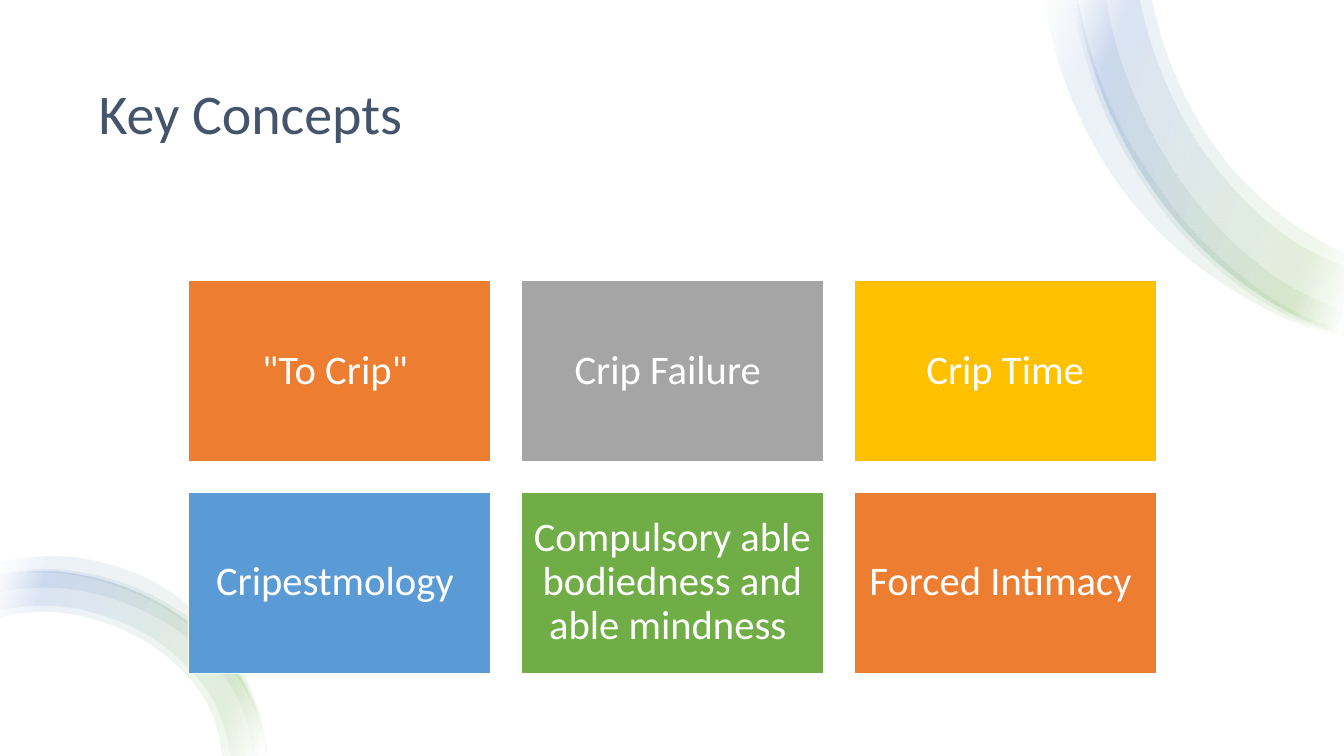
"""Build the Key Concepts slide: two curved ribbons, a title and a grid of tiles."""
from dataclasses import dataclass

from lxml import etree
from pptx import Presentation
from pptx import util as u
from pptx.dml.color import RGBColor
from pptx.enum import shapes, text
from pptx.oxml.ns import qn

Points = list[tuple[float, float]]

COLUMNS, ROWS = 13.33, 7.5
CELL = u.Inches(1)
TILE_COLUMNS, TILE_ROWS, GAP = 3, 1.8, 0.3
TILES_ACROSS = 3
BOARD_LEFT, BOARD_TOP = 1.87, 2.78
RIBBON_STOPS = [(2, "FFFFFF"), (16, "70AD47"), (85, "4472C4"), (100, "FFFFFF")]
RIBBON_OPACITY = 10


@dataclass
class Tile:
    label: str
    colour: str


@dataclass
class Ribbon:
    outer: Points
    inner: Points


TILES = [
    Tile('"To Crip" ', "ED7D31"),
    Tile("Crip Failure ", "A5A5A5"),
    Tile("Crip Time", "FFC000"),
    Tile("Cripestmology ", "5B9BD5"),
    Tile("Compulsory able bodiedness and able mindness ", "70AD47"),
    Tile("Forced Intimacy ", "ED7D31"),
]

TOP_EDGE = [(13.33, 3.32), (13.09, 3.24), (12.23, 2.74), (11.52, 2), (10.99, 1.07),
            (10.69, 0.04), (10.67, -0.09)]
LOW_EDGE = [(2.63, 7.5), (2.62, 7.35), (2.36, 6.69), (1.85, 6.16), (1.17, 5.8),
            (0.4, 5.67), (0, 5.72)]

RIBBONS = [
    Ribbon([(13.33, 3.35), (12.82, 3.19), (12.21, 2.87), (11.65, 2.45), (11.16, 1.92),
            (10.78, 1.31), (10.41, 0.26), (10.36, -0.09)],
           [(10.68, -0.09), (10.82, 0.52), (11.06, 1.15), (11.4, 1.73), (11.81, 2.27),
            (12.3, 2.73), (12.86, 3.1), (13.33, 3.28)]),
    Ribbon(TOP_EDGE,
           [(11.41, -0.09), (11.58, 0.55), (12.19, 1.64), (13.07, 2.38), (13.33, 2.51)]),
    Ribbon([(13.33, 3.33), (12.79, 3.14), (11.73, 2.33), (11.32, 1.79), (10.99, 1.19),
            (10.68, 0.2), (10.63, -0.09)],
           [(10.96, -0.09), (11.07, 0.44), (11.29, 1.04), (11.95, 2.11), (12.39, 2.55),
            (12.9, 2.9), (13.33, 3.08)]),
    Ribbon(TOP_EDGE,
           [(11.29, -0.09), (11.47, 0.59), (12.1, 1.72), (13.01, 2.5), (13.33, 2.64)]),
    Ribbon(LOW_EDGE,
           [(0, 6.13), (0.4, 6.07), (1.07, 6.19), (1.66, 6.52), (2.06, 7), (2.2, 7.5)]),
    Ribbon(LOW_EDGE,
           [(0, 6.06), (0.4, 6.01), (1.09, 6.13), (1.7, 6.47), (2.12, 6.97), (2.28, 7.5)]),
    Ribbon([(2.63, 7.5), (2.59, 7.19), (2.47, 6.85), (2.03, 6.27), (1.42, 5.87),
            (0.69, 5.67), (0.31, 5.66), (0, 5.71)],
           [(0, 5.88), (0.33, 5.84), (0.67, 5.85), (1.34, 6.03), (1.92, 6.39),
            (2.34, 6.91), (2.51, 7.5)]),
    Ribbon([(2.64, 7.5), (2.5, 6.87), (2.1, 6.23), (1.48, 5.75), (0.71, 5.53),
            (0.31, 5.53), (0, 5.59)],
           [(0, 5.72), (0.32, 5.68), (0.69, 5.7), (1.22, 5.84), (1.71, 6.09),
            (2.25, 6.58), (2.52, 7.05), (2.62, 7.5)]),
]


def colour(value: str) -> RGBColor:
    """Turn a hex string into a colour."""
    return RGBColor.from_string(value)


def area(left: float, top: float, width: float, height: float) -> list[int]:
    """Turn columns and rows into slide lengths."""
    return [round(length * CELL) for length in (left, top, width, height)]


def curves(points: Points) -> list[list[complex]]:
    """Return two control points and an end point for each step of a smooth edge."""
    knots = [complex(*point) for point in points]
    steps = [b - a for a, b in zip(knots, knots[1:])]
    slopes = [(a / abs(a) * abs(b) + b / abs(b) * abs(a)) / (abs(a) + abs(b))
              for a, b in zip(steps, steps[1:])]
    first = 2 * steps[0] / abs(steps[0]) - slopes[0]
    last = 2 * steps[-1] / abs(steps[-1]) - slopes[-1]
    slopes = [first, *slopes, last]
    return [[a + v * abs(s) / 3, b - w * abs(s) / 3, b]
            for a, b, s, v, w in zip(knots, knots[1:], steps, slopes, slopes[1:])]


def draw_ribbon(page, ribbon: Ribbon) -> None:
    """Draw a translucent gradient band between two curved edges."""
    outline = [(x * CELL, y * CELL) for x, y in ribbon.outer + ribbon.inner]
    builder = page.shapes.build_freeform(*outline[0], scale=1.0)
    builder.add_line_segments(outline[1:], close=True)
    band = builder.convert_to_shape()
    lines = list(band.element.iter(qn("a:lnTo")))
    edges = [*curves(ribbon.outer), None, *curves(ribbon.inner)]
    for line, edge in zip(lines, edges):
        if edge:
            bend = etree.Element(qn("a:cubicBezTo"))
            for point in edge:
                etree.SubElement(bend, qn("a:pt"),
                                 x=str(round(point.real * CELL - band.left)),
                                 y=str(round(point.imag * CELL - band.top)))
            line.getparent().replace(line, bend)
    band.shadow.inherit = False
    band.line.fill.background()
    band.fill.gradient()
    band.fill.gradient_angle = 160
    stops = next(band.element.iter(qn("a:gsLst")))
    stops.clear()
    for position, value in RIBBON_STOPS:
        stop = etree.SubElement(stops, qn("a:gs"), pos=str(position * 1000))
        tint = etree.SubElement(stop, qn("a:srgbClr"), val=value)
        etree.SubElement(tint, qn("a:alpha"), val=str(RIBBON_OPACITY * 1000))


def draw_box(page, place: list[int], fill: str, line: str | None = None):
    """Draw a plain rectangle and return it."""
    box = page.shapes.add_shape(shapes.MSO_SHAPE.RECTANGLE, *place)
    box.shadow.inherit = False
    box.fill.solid()
    box.fill.fore_color.rgb = colour(fill)
    if line:
        box.line.color.rgb = colour(line)
        box.line.width = u.Pt(1)
    else:
        box.line.fill.background()
    return box


def write(box, words: str, *, size: float, ink: str, align, inset: float) -> None:
    """Write one formatted paragraph, centred vertically in the box."""
    frame = box.text_frame
    frame.word_wrap = True
    frame.vertical_anchor = text.MSO_ANCHOR.MIDDLE
    frame.margin_left = frame.margin_right = u.Inches(inset)
    frame.margin_top = frame.margin_bottom = u.Inches(inset)
    para = frame.paragraphs[0]
    para.alignment = align
    para.line_spacing = 0.9
    span = para.add_run()
    span.text = words
    span.font.name = "Calibri"
    span.font.size = u.Pt(size)
    span.font.color.rgb = colour(ink)


def draw_tile(page, index: int, tile: Tile) -> None:
    """Draw a labelled tile at its place in the grid."""
    row, column = divmod(index, TILES_ACROSS)
    place = area(BOARD_LEFT + column * (TILE_COLUMNS + GAP),
                 BOARD_TOP + row * (TILE_ROWS + GAP), TILE_COLUMNS, TILE_ROWS)
    box = draw_box(page, place, tile.colour, line="FFFFFF")
    write(box, tile.label, size=29, ink="FFFFFF", align=text.PP_ALIGN.CENTER, inset=0.12)


def main() -> None:
    """Build and save the deck."""
    deck = Presentation()
    deck.slide_width, deck.slide_height = area(0, 0, COLUMNS, ROWS)[2:]
    page = deck.slides.add_slide(deck.slide_layouts[6])
    draw_box(page, area(0, 0, COLUMNS, ROWS), "FFFFFF")
    title = page.shapes.add_textbox(*area(0.88, 0.5, 11.57, 1.3))
    write(title, "Key Concepts", size=40, ink="44546A", align=text.PP_ALIGN.LEFT, inset=0.1)
    for ribbon in RIBBONS:
        draw_ribbon(page, ribbon)
    for index, tile in enumerate(TILES):
        draw_tile(page, index, tile)
    deck.save("out.pptx")


if __name__ == "__main__":
    main()
